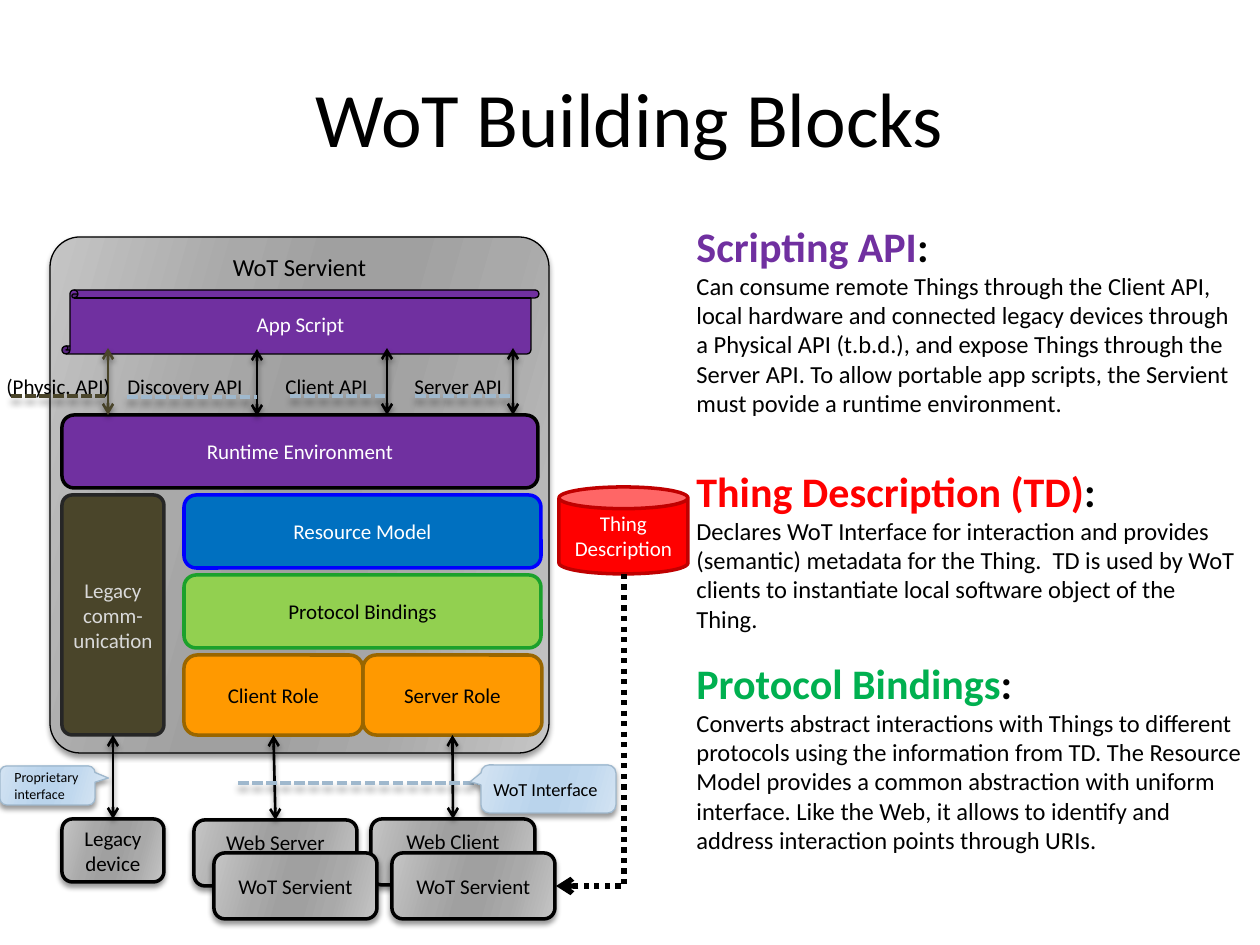
from dataclasses import dataclass

from pptx import Presentation
from pptx.dml.color import RGBColor
from pptx.enum.dml import MSO_LINE
from pptx.enum.shapes import MSO_CONNECTOR, MSO_SHAPE
from pptx.enum.text import MSO_ANCHOR, MSO_AUTO_SIZE, PP_ALIGN
from pptx.oxml import parse_xml
from pptx.oxml.ns import nsdecls, qn
from pptx.util import Emu, Pt

PX = 914400 / 126
TOP, BOTTOM = 0, 2


def px(n):
    return Emu(round(n * PX))


@dataclass(frozen=True)
class Theme:
    font: str = "Calibri"
    black: str = "000000"
    white: str = "FFFFFF"
    purple: str = "7030A0"
    red: str = "FF0000"
    dark_red: str = "C00000"
    green: str = "00B050"
    lime: str = "92D050"
    lime_line: str = "1BA12B"
    blue: str = "0070C0"
    blue_line: str = "0000FF"
    orange: str = "FF9900"
    orange_line: str = "996600"
    olive: str = "4A452A"
    olive_line: str = "262626"
    pale: str = "D9D9D9"
    steel: str = "9FB8CD"
    # Gradients run from edge to core and back
    gray: tuple = ("C5C5C5", "A9A9A9", "A0A0A0")
    sky: tuple = ("D3E3F2", "C0D8EE", "BAD4EC")
    title: float = 44
    heading: float = 24
    body: float = 14
    label: float = 12
    note: float = 10.5
    small: float = 8


class Diagram:
    def __init__(self, slide, theme):
        self.s, self.t = slide, theme

    def add_runs(self, tf, paras, align, anchor):
        """Each paragraph is a list of (text, size, colour, bold) runs."""
        tf.vertical_anchor = anchor
        for i, runs in enumerate(paras):
            p = tf.paragraphs[0] if i == 0 else tf.add_paragraph()
            p.alignment = align
            for text, size, color, bold in runs:
                r = p.add_run()
                r.text = text
                r.font.name, r.font.size, r.font.bold = self.t.font, Pt(size), bold
                r.font.color.rgb = RGBColor.from_string(color)

    def gradient(self, sp, colors):
        stops = zip((0, 30, 45, 55, 73, 100), colors + colors[::-1])
        gs = "".join(f'<a:gs pos="{pos * 1000}"><a:srgbClr val="{c}"/></a:gs>' for pos, c in stops)
        sp.fill.solid()
        spPr = sp._element.spPr
        spPr.replace(spPr.find(qn("a:solidFill")), parse_xml(
            f'<a:gradFill {nsdecls("a")} rotWithShape="1"><a:gsLst>{gs}</a:gsLst>'
            '<a:lin ang="960000" scaled="0"/></a:gradFill>'))

    def effects(self, item, shadow=None):
        """Set the shadow to (blur, distance) in points, or to none."""
        inner = ""
        if shadow:
            blur, dist = (Pt(v) for v in shadow)
            inner = (f'<a:outerShdw blurRad="{blur}" dist="{dist}" dir="5400000" rotWithShape="0">'
                     '<a:srgbClr val="000000"><a:alpha val="40000"/></a:srgbClr></a:outerShdw>')
        item._element.spPr.append(parse_xml(f'<a:effectLst {nsdecls("a")}>{inner}</a:effectLst>'))

    def block(self, box, text, fill, line, color=None, kind=MSO_SHAPE.ROUNDED_RECTANGLE,
              width=2, size=None, align=PP_ALIGN.CENTER, anchor=MSO_ANCHOR.MIDDLE,
              adj=(), insets=None, wrap=True):
        sp = self.s.shapes.add_shape(kind, *map(px, box))
        for i, value in enumerate(adj):
            sp.adjustments[i] = value
        if isinstance(fill, tuple):
            self.gradient(sp, fill)
        else:
            sp.fill.solid()
            sp.fill.fore_color.rgb = RGBColor.from_string(fill)
        sp.line.color.rgb = RGBColor.from_string(line)
        sp.line.width = Pt(width)
        self.effects(sp, (3, 2) if isinstance(fill, tuple) else None)
        tf = sp.text_frame
        tf.word_wrap = wrap
        if insets:
            tf.margin_left, tf.margin_right = map(px, insets)
        style = (size or self.t.label, color or self.t.black, False)
        self.add_runs(tf, [[(part, *style)] for part in text.split("\n")], align, anchor)
        return sp

    def device(self, box, text, anchor=MSO_ANCHOR.MIDDLE):
        return self.block(box, text, self.t.gray, self.t.black, anchor=anchor, wrap=False)

    def callout(self, box, text, size, adj, insets=None):
        return self.block(box, text, self.t.sky, self.t.steel, width=0.75, size=size,
                          kind=MSO_SHAPE.ROUNDED_RECTANGULAR_CALLOUT, adj=adj,
                          align=PP_ALIGN.LEFT, insets=insets)

    def text(self, box, paras, align=PP_ALIGN.LEFT, anchor=MSO_ANCHOR.TOP, grow=True):
        tf = self.s.shapes.add_textbox(*map(px, box)).text_frame
        tf.word_wrap = True
        if grow:
            tf.auto_size = MSO_AUTO_SIZE.SHAPE_TO_FIT_TEXT
        self.add_runs(tf, paras, align, anchor)

    def line(self, points, color, width, dash=None, ends=(), shadow=None, kind=MSO_CONNECTOR.STRAIGHT):
        c = self.s.shapes.add_connector(kind, *map(px, points))
        c.line.color.rgb = RGBColor.from_string(color)
        c.line.width = Pt(width)
        if dash:
            c.line.dash_style = dash
        ln = c._element.spPr.find(qn("a:ln"))
        for end in ends:
            ln.append(parse_xml(f'<a:{end} {nsdecls("a")} type="arrow"/>'))
        self.effects(c, shadow)
        return c

    def arrow(self, x, y1, y2, color=None):
        return self.line((x, y1, x, y2), color or self.t.black, 1.5,
                         ends=("headEnd", "tailEnd"), shadow=(3, 2))

    def link(self, upper, lower):
        c = self.arrow(0, 0, 1)
        c.begin_connect(upper, BOTTOM)
        c.end_connect(lower, TOP)

    def dashes(self, x1, x2, y, color=None):
        self.line((x1, y, x2, y), color or self.t.steel, 2, MSO_LINE.SQUARE_DOT, shadow=(4, 3.4))

    def label(self, x, width, text):
        self.text((x, 367, width, 38), [[(text, self.t.label, self.t.black, False)]])

    def section(self, y, height, heading, color, body):
        t = self.t
        self.text((684, y, 571, height), [
            [(heading, t.heading, color, True), (":", t.heading, t.black, True)],
            [(body, t.body, t.black, False)]])

    def elbow(self, x, y1, x2, y2):
        """Dotted arrow that runs down from (x, y1), then left to (x2, y2)."""
        w, h = y2 - y1, x - x2
        left, top = (x + x2 - w) / 2, (y1 + y2 - h) / 2
        c = self.line((left, top, left + w, top + h), self.t.black, 3, MSO_LINE.ROUND_DOT,
                      ends=("tailEnd",), kind=MSO_CONNECTOR.ELBOW)
        spPr = c._element.spPr
        spPr.find(qn("a:xfrm")).set("rot", "5400000")
        spPr.find(qn("a:prstGeom")).set("prst", "bentConnector2")


def main():
    prs = Presentation()
    prs.slide_width, prs.slide_height = px(1260), px(945)
    t = Theme()
    d = Diagram(prs.slides.add_slide(prs.slide_layouts[6]), t)

    # Title
    d.text((63, 38, 1134, 157), [[("WoT Building Blocks", t.title, t.black, False)]],
           PP_ALIGN.CENTER, MSO_ANCHOR.MIDDLE, grow=False)

    # Servient and its layers
    d.block((50, 237, 499, 516), "WoT Servient", t.gray, t.black, width=0.75, size=t.body,
            anchor=MSO_ANCHOR.TOP, adj=(0.06,), wrap=False)
    server, client = (d.block((x, 655, 179, 80), name, t.orange, t.orange_line)
                      for x, name in ((363, "Server Role"), (184, "Client Role")))
    d.block((184, 575, 357, 73), "Protocol Bindings", t.lime, t.lime_line)
    d.block((184, 495, 357, 73), "Resource Model", t.blue, t.blue_line, t.white)
    d.block((62, 290, 477, 64), "App Script", t.purple, t.black, t.white,
            kind=MSO_SHAPE.VERTICAL_SCROLL, width=0.75, wrap=False)
    legacy = d.block((62, 495, 102, 240), "Legacy comm-unication", t.olive, t.olive_line,
                     t.pale, adj=(0.1,), insets=(5, 5))

    # Client and server API
    for x, left, width, name in ((387, 273, 118, "Client API"), (513, 402, 121, "Server API")):
        d.arrow(x, 348, 415)
        d.label(left, width, name)

    # Thing Description store
    d.block((559, 487, 129, 87), "Thing\nDescription", t.red, t.dark_red, t.white,
            kind=MSO_SHAPE.CAN, wrap=False)

    # Outside devices
    device = d.device((62, 819, 102, 63), "Legacy\ndevice")
    web_server = d.device((194, 820, 163, 66), "Web Server", MSO_ANCHOR.TOP)
    web_client = d.device((371, 819, 164, 66), "Web Client", MSO_ANCHOR.TOP)
    for upper, lower in ((legacy, device), (client, web_server), (server, web_client)):
        d.link(upper, lower)
    d.callout((0, 766, 95, 39), "Proprietary interface", t.small, (0.64, -0.19, 0.17))
    d.dashes(238, 491, 783)
    d.block((62, 415, 476, 73), "Runtime Environment", t.purple, t.black, t.white)
    d.dashes(290, 387, 396)
    d.dashes(415, 513, 396)
    for x in (214, 392):
        d.device((x, 853, 163, 66), "WoT Servient")

    # Explanations
    d.section(214, 212, "Scripting API", t.purple,
              "Can consume remote Things through the Client API, local hardware and connected legacy "
              "devices through a Physical API (t.b.d.), and expose Things through the Server API. To "
              "allow portable app scripts, the Servient must povide a runtime environment.")
    d.section(651, 242, "Protocol Bindings", t.green,
              "Converts abstract interactions with Things to different protocols using the information "
              "from TD. The Resource Model provides a common abstraction with uniform interface. Like "
              "the Web, it allows to identify and address interaction points through URIs.")
    d.section(459, 152, "Thing Description (TD)", t.red,
              "Declares WoT Interface for interaction and provides (semantic) metadata for the Thing.  "
              "TD is used by WoT clients to instantiate local software object of the Thing.")

    # WoT interface and the path from the Thing Description
    d.callout((481, 765, 135, 48), "WoT Interface", t.note, (-0.58, -0.15, 0.17), (10, 0))
    d.elbow(624, 574, 556, 886)

    # Discovery and physical API
    d.arrow(257, 349, 416)
    d.label(115, 149, "Discovery API")
    d.dashes(127, 257, 397)
    d.arrow(108, 348, 415, t.olive)
    d.label(-6, 130, "(Physic. API)")
    d.dashes(11, 105, 396, t.olive)

    prs.save("out.pptx")


if __name__ == "__main__":
    main()
